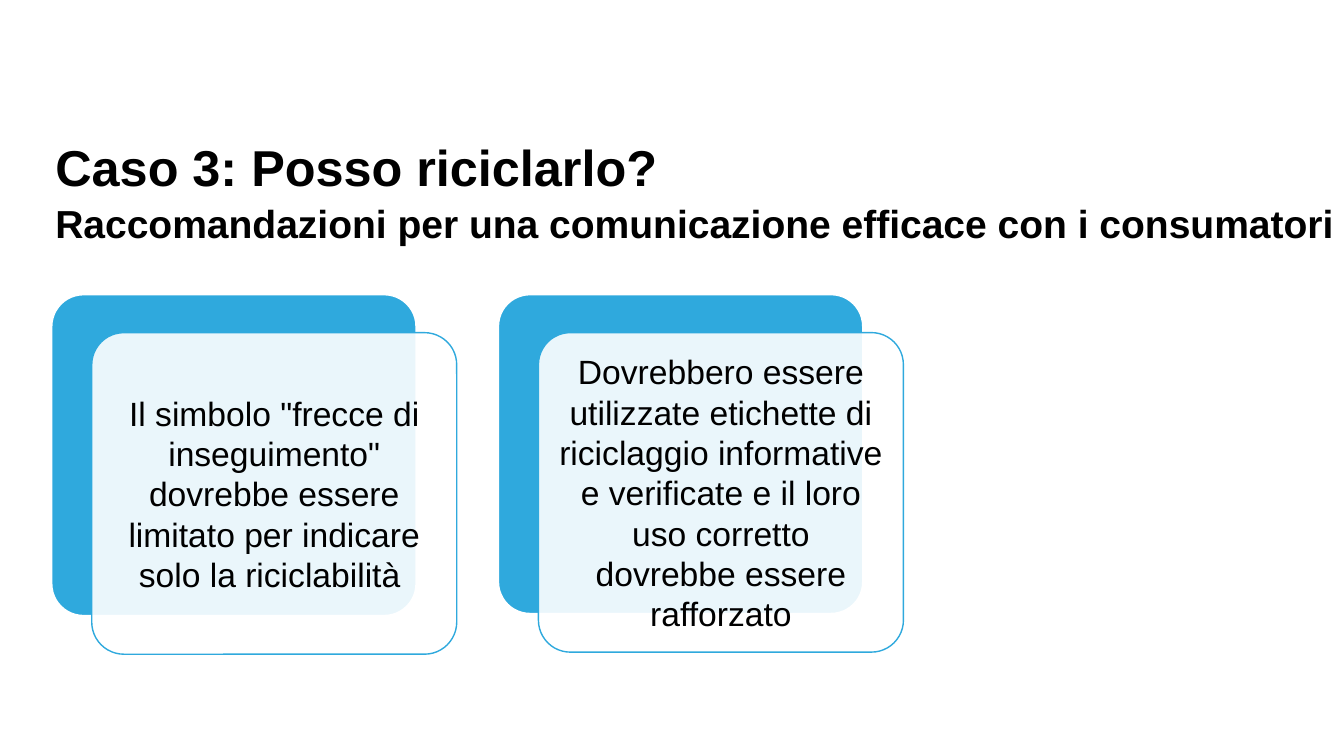
import pptx
import pptx.util
import pptx.dml.color
import pptx.enum.shapes
import pptx.enum.text
import pptx.oxml.ns
import lxml.etree

Inches = pptx.util.Inches
Pt = pptx.util.Pt
BLUE = "2FA9DD"
WHITE = "FFFFFF"
BLACK = "000000"
CARDS = [
    (0.51, 3.19, 'Il simbolo "frecce di inseguimento" dovrebbe essere limitato '
     'per indicare solo la riciclabilità\u00a0'),
    (4.94, 3.17, "Dovrebbero essere utilizzate etichette di riciclaggio informative "
     "e verificate e il loro uso corretto dovrebbe essere rafforzato"),
]


def color(value):
    return pptx.dml.color.RGBColor.from_string(value)


def add_run(p, text, size, bold=False):
    r = p.add_run()
    r.text = text
    r.font.name = "Arial"
    r.font.size = Pt(size)
    r.font.bold = bold
    r.font.color.rgb = color(BLACK)


def add_panel(s, x, y, w, h, fill, line, line_width, alpha=None):
    sp = s.shapes.add_shape(pptx.enum.shapes.MSO_SHAPE.ROUNDED_RECTANGLE,
                            Inches(x), Inches(y), Inches(w), Inches(h))
    sp.shadow.inherit = False
    sp.adjustments[0] = 0.1
    sp.fill.solid()
    sp.fill.fore_color.rgb = color(fill)
    sp.line.color.rgb = color(line)
    sp.line.width = Pt(line_width)
    if alpha is not None:
        qn = pptx.oxml.ns.qn
        clr = sp.fill._xPr.find(qn("a:solidFill")).find(qn("a:srgbClr"))
        lxml.etree.SubElement(clr, qn("a:alpha")).set("val", str(alpha * 1000))


def add_heading(s, x, y, w, h):
    tf = s.shapes.add_textbox(Inches(x), Inches(y), Inches(w), Inches(h)).text_frame
    tf.word_wrap = True
    tf.margin_right = 0
    p = tf.paragraphs[0]
    p.line_spacing = 0.9
    add_run(p, "Caso 3: Posso riciclarlo?", 36, True)
    p = tf.add_paragraph()
    p.line_spacing = 0.9
    p.space_before = Pt(5)
    add_run(p, "Raccomandazioni per una comunicazione efficace con i consumatori", 27.9, True)


def add_card(s, x, y, w, h, text):
    add_panel(s, x, y, w, h, BLUE, WHITE, 1.5)
    front_x, front_y = x + 0.4, y + 0.38
    add_panel(s, front_x, front_y, w, h, WHITE, BLUE, 1, 90)
    pad = 0.095
    box = s.shapes.add_textbox(Inches(front_x + pad), Inches(front_y + pad),
                               Inches(w - 2 * pad), Inches(h - 2 * pad))
    tf = box.text_frame
    tf.word_wrap = True
    tf.vertical_anchor = pptx.enum.text.MSO_ANCHOR.MIDDLE
    tf.margin_left = tf.margin_right = tf.margin_top = tf.margin_bottom = Inches(0.1)
    p = tf.paragraphs[0]
    p.alignment = pptx.enum.text.PP_ALIGN.CENTER
    add_run(p, text, 24)


def main():
    prs = pptx.Presentation()
    prs.slide_width = Inches(13.33)
    prs.slide_height = Inches(7.5)
    s = prs.slides.add_slide(prs.slide_layouts[6])
    add_heading(s, 0.45, 1.37, 12.88, 0.71)
    for x, h, text in CARDS:
        add_card(s, x, 2.92, 3.62, h, text)
    prs.save("out.pptx")


if __name__ == "__main__":
    main()
